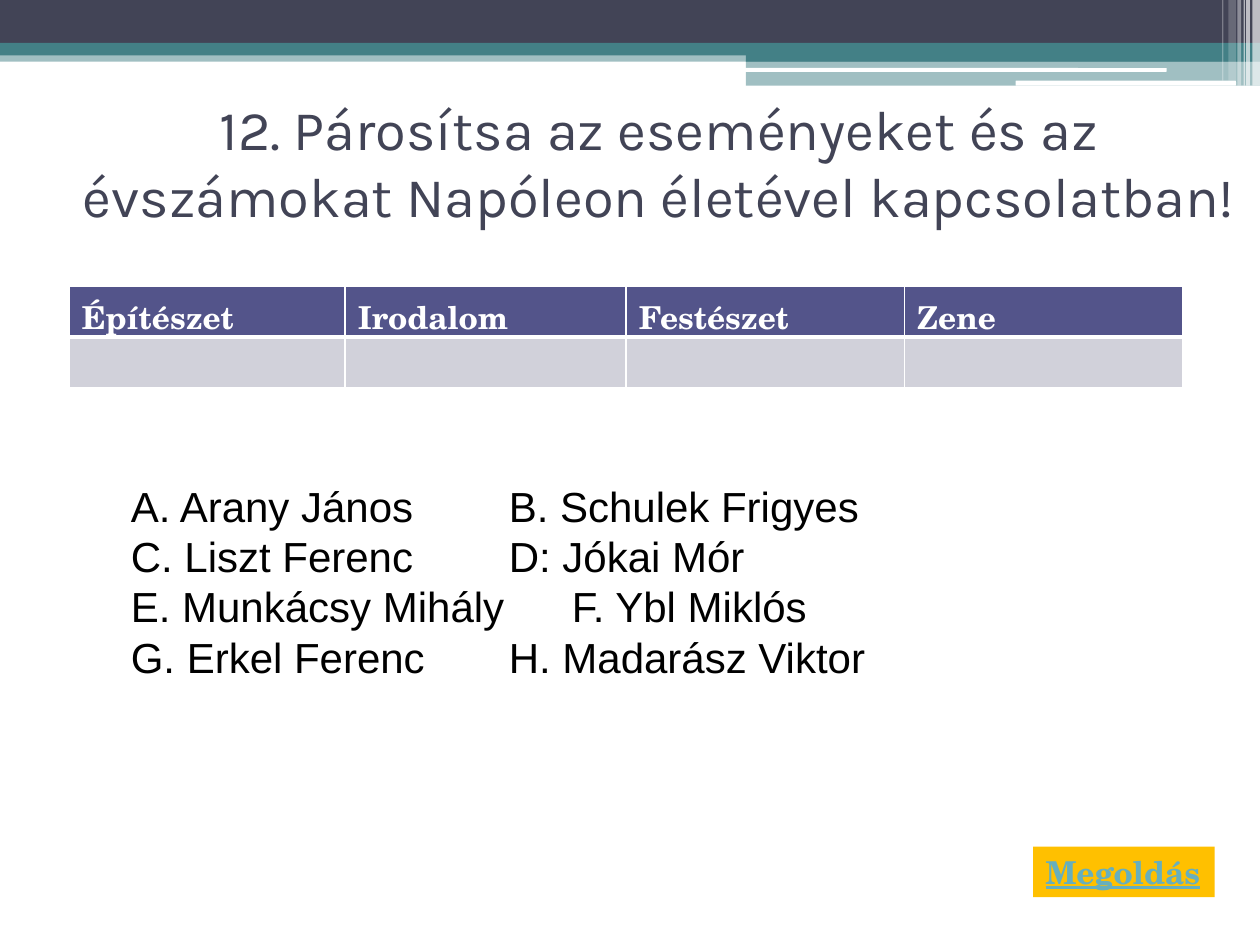
from pptx import Presentation
from pptx.dml.color import RGBColor
from pptx.enum.shapes import MSO_SHAPE as Shape
from pptx.enum.text import MSO_ANCHOR as Anchor, PP_ALIGN as Align
from pptx.oxml.ns import qn
from pptx.util import Inches, Pt
from lxml.etree import SubElement

WHITE, DARK, TEAL = "FFFFFF", "424456", "438086"
SERIF = "TeX Gyre Schola"

TITLE = "12. Párosítsa az eseményeket és az évszámokat Napóleon életével kapcsolatban!"
HEADS = ["Építészet", "Irodalom", "Festészet", "Zene"]
WIDTHS = [2.19, 2.23, 2.21, 2.21]
NAMES = [
    ("A. Arany János", "B. Schulek Frigyes"),
    ("C. Liszt Ferenc", "D: Jókai Mór"),
    ("E. Munkácsy Mihály", "F. Ybl Miklós"),
    ("G. Erkel Ferenc", "H. Madarász Viktor"),
]
# left, top, width, height, colour, opacity in percent
BANDS = [
    (0, 0.4, 10, 0.09, TEAL, 50),
    (0, 0, 10, 0.34, DARK, 100),
    (0, 0.34, 10, 0.1, TEAL, 100),
    (5.92, 0.39, 4.08, 0.1, TEAL, 100),
    (5.92, 0.48, 4.08, 0.2, TEAL, 50),
]
PILLS = [(5.91, 0.54, 3.35, 0.03), (8.06, 0.64, 1.75, 0.04)]
# left, width, height, opacity in percent
STRIPES = [
    (9.94, 0.06, 0.68, 65),
    (9.89, 0.03, 0.68, 65),
    (9.87, 0.01, 0.68, 60),
    (9.82, 0.03, 0.68, 40),
    (9.75, 0.06, 0.64, 20),
    (9.7, 0.01, 0.64, 30),
]


def paint(fill, color, alpha=100):
    fill.solid()
    fill.fore_color.rgb = RGBColor.from_string(color)
    if alpha < 100:
        clr = fill._xPr.find(qn("a:solidFill"))[0]
        SubElement(clr, qn("a:alpha"), val=str(alpha * 1000))


def block(box, color, alpha=100, kind=Shape.RECTANGLE):
    """Add a filled shape without line or shadow."""
    shape = slide.shapes.add_shape(kind, *map(Inches, box))
    shape.shadow.inherit = False
    shape.line.fill.background()
    paint(shape.fill, color, alpha)
    return shape


def write(frame, lines, size, face, color, bold=False, line=False, align=Align.LEFT):
    frame.text = "\n".join(lines)
    for para in frame.paragraphs:
        para.alignment = align
        font = para.font
        font.size, font.name, font.bold, font.underline = Pt(size), face, bold, line
        font.color.rgb = RGBColor.from_string(color)


def label(box, lines, *style, **more):
    frame = slide.shapes.add_textbox(*map(Inches, box)).text_frame
    frame.word_wrap = True
    frame.vertical_anchor = Anchor.MIDDLE
    write(frame, lines, *style, **more)


def edge(cell, sides):
    """Draw white cell borders; sides maps L, R, T, B to points."""
    props = cell._tc.get_or_add_tcPr()
    for side, width in sides.items():
        ln = SubElement(props, qn("a:ln" + side), w=str(Pt(width)))
        SubElement(SubElement(ln, qn("a:solidFill")), qn("a:srgbClr"), val=WHITE)


deck = Presentation()
deck.slide_width, deck.slide_height = Inches(10), Inches(7.5)
slide = deck.slides.add_slide(deck.slide_layouts[6])

for *box, color, alpha in BANDS:
    block(box, color, alpha)
for box in PILLS:
    block(box, WHITE, kind=Shape.ROUNDED_RECTANGLE)
for left, width, height, alpha in STRIPES:
    block((left, 0, width, height), WHITE, alpha)

label((0.47, 0.7, 9.53, 1.17), [TITLE], 32, "Karla", DARK, align=Align.CENTER)

button = block((8.2, 6.72, 1.44, 0.4), "FFC000").text_frame
button.word_wrap = False
write(button, ["Megoldás"], 18, SERIF, "67AFBD", bold=True, line=True)

frame = slide.shapes.add_table(2, len(HEADS), *map(Inches, (0.55, 2.27, 8.83, 0.81)))
table = frame.table
for col, (head, width) in enumerate(zip(HEADS, WIDTHS)):
    table.columns[col].width = Inches(width)
    top, low = table.cell(0, col), table.cell(1, col)
    edge(top, {"L": 1, "R": 1, "T": 1, "B": 3})
    edge(low, {"L": 1, "R": 1, "T": 3, "B": 1})
    paint(top.fill, "53548A")
    paint(low.fill, "D1D1DA")
    write(top.text_frame, [head], 18, SERIF, WHITE, bold=True)

label((0.94, 3.75, 7.27, 1.72), ["\t\t".join(pair) for pair in NAMES], 24, "Arial", "000000")

deck.save("out.pptx")
